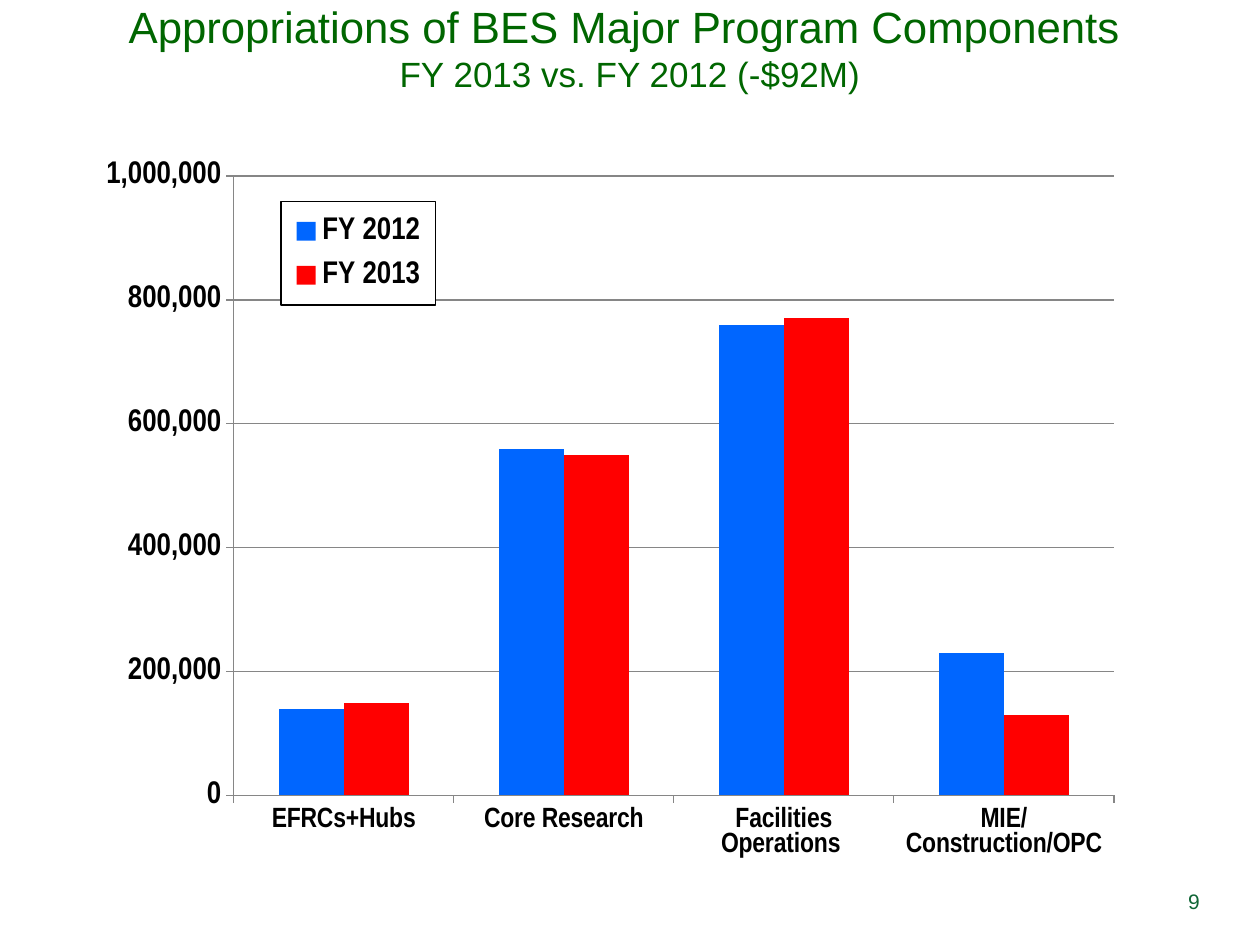
from dataclasses import dataclass

from lxml.etree import SubElement
from pptx import Presentation
from pptx.chart.data import CategoryChartData
from pptx.dml.color import RGBColor as Color
from pptx.enum.chart import XL_CHART_TYPE as ChartType
from pptx.enum.chart import XL_LEGEND_POSITION as LegendPosition
from pptx.enum.chart import XL_TICK_MARK as TickMark
from pptx.enum.text import MSO_ANCHOR as Anchor
from pptx.enum.text import PP_ALIGN as Align
from pptx.oxml.ns import qn
from pptx.util import Inches, Pt


@dataclass(frozen=True)
class Theme:
    title: str = "006600"
    number: str = "106636"
    ink: str = "000000"
    rule: str = "868686"
    series: tuple = ("0066FF", "FF0000")
    body_font: str = "Arial"
    chart_font: str = "Arial Narrow"
    title_size: float = 25
    subtitle_size: float = 20
    value_size: float = 18
    category_size: float = 16
    number_size: float = 12


CATEGORIES = ("EFRCs+Hubs", "Core Research", "Facilities Operations ", "MIE/Construction/OPC")
BUDGETS = {
    "FY 2012": (140000, 560000, 760000, 230000),
    "FY 2013": (150000, 550000, 770000, 130000),
}


def assign(target, **values):
    for name, value in values.items():
        setattr(target, name, value)


def style_font(font, name, size, color, bold=False):
    assign(font, name=name, size=Pt(size), bold=bold)
    font.color.rgb = Color.from_string(color)


def style_line(line, color):
    line.color.rgb = Color.from_string(color)
    line.width = Pt(0.75)


def place_in_chart(element, before, shares, inner=False):
    """Give a plot area or legend a fixed place, in shares of the chart."""
    for old in element.findall(qn("c:layout")):
        element.remove(old)
    layout = SubElement(element, qn("c:layout"))
    manual = SubElement(layout, qn("c:manualLayout"))
    settings = [("layoutTarget", "inner")] if inner else []
    settings += [("xMode", "edge"), ("yMode", "edge"), *zip("xywh", shares)]
    for tag, value in settings:
        SubElement(manual, qn(f"c:{tag}")).set("val", str(value))
    element.find(qn(before)).addprevious(layout)


class SlideBuilder:
    def __init__(self, deck, theme):
        self.deck, self.theme = deck, theme
        self.slide = deck.slides.add_slide(deck.slide_layouts[6])

    def area(self, left, top, width, height):
        """Turn shares of the slide into lengths."""
        across, down = self.deck.slide_width, self.deck.slide_height
        return [int(share * full) for share, full in
                zip((left, top, width, height), (across, down, across, down))]

    def text(self, shares, lines, color, align, anchor=Anchor.TOP, margin=0.05):
        frame = self.slide.shapes.add_textbox(*self.area(*shares)).text_frame
        assign(frame, word_wrap=True, vertical_anchor=anchor,
               margin_top=Inches(margin), margin_bottom=Inches(margin))
        for index, (words, size) in enumerate(lines):
            para = frame.add_paragraph() if index else frame.paragraphs[0]
            para.alignment = align
            span = para.add_run()
            span.text = words
            style_font(span.font, self.theme.body_font, size, color)

    def columns(self, shares, categories, series, plot_shares, legend_shares):
        theme = self.theme
        data = CategoryChartData(number_format="#,##0")
        data.categories = categories
        for name, values in series.items():
            data.add_series(name, values)
        chart = self.slide.shapes.add_chart(
            ChartType.COLUMN_CLUSTERED, *self.area(*shares), data).chart
        chart.has_title = False

        # Bars
        plot = chart.plots[0]
        assign(plot, gap_width=139, overlap=0, vary_by_categories=False)
        for bars, color in zip(plot.series, theme.series):
            bars.format.fill.solid()
            bars.format.fill.fore_color.rgb = Color.from_string(color)

        # Axes
        values_axis = chart.value_axis
        assign(values_axis, minimum_scale=0, maximum_scale=1000000,
               major_unit=200000, has_major_gridlines=True)
        style_line(values_axis.major_gridlines.format.line, theme.rule)
        assign(values_axis.tick_labels, number_format="#,##0", number_format_is_linked=False)
        for axis, size in ((chart.category_axis, theme.category_size),
                           (values_axis, theme.value_size)):
            assign(axis, major_tick_mark=TickMark.OUTSIDE, minor_tick_mark=TickMark.NONE)
            style_line(axis.format.line, theme.rule)
            style_font(axis.tick_labels.font, theme.chart_font, size, theme.ink, True)

        # Boxed legend over the plot
        chart.has_legend = True
        legend = chart.legend
        assign(legend, position=LegendPosition.RIGHT, include_in_layout=False)
        style_font(legend.font, theme.chart_font, theme.value_size, theme.ink, True)
        frame = legend._element
        box = SubElement(frame, qn("c:spPr"))
        fill = SubElement(box, qn("a:solidFill"))
        SubElement(fill, qn("a:srgbClr")).set("val", "FFFFFF")
        line = SubElement(box, qn("a:ln"), w=str(Pt(0.75)))
        fill = SubElement(line, qn("a:solidFill"))
        SubElement(fill, qn("a:srgbClr")).set("val", theme.ink)
        frame.find(qn("c:txPr")).addprevious(box)
        place_in_chart(frame, "c:overlay", legend_shares)
        plot_area = chart._chartSpace.chart.plotArea
        place_in_chart(plot_area, "c:barChart", plot_shares, inner=True)


def main():
    deck = Presentation()
    assign(deck, slide_width=Inches(10), slide_height=Inches(7.5))
    theme = Theme()
    page = SlideBuilder(deck, theme)

    # Page number
    page.text((0.91, 0.927, 0.052, 0.053), [("9", theme.number_size)],
              theme.number, Align.RIGHT, Anchor.MIDDLE)

    # Budget chart
    page.columns((0.071, 0.171, 0.818, 0.737), CATEGORIES, BUDGETS,
                 plot_shares=(0.14, 0.02, 0.854, 0.894),
                 legend_shares=(0.186, 0.057, 0.15, 0.149))

    # Title
    page.text((0, -0.019, 1, 0.14),
              [("Appropriations of BES Major Program Components ", theme.title_size),
               ("FY 2013 vs. FY 2012 (-$92M)", theme.subtitle_size)],
              theme.title, Align.CENTER, margin=0.14)

    deck.save("out.pptx")


if __name__ == "__main__":
    main()
